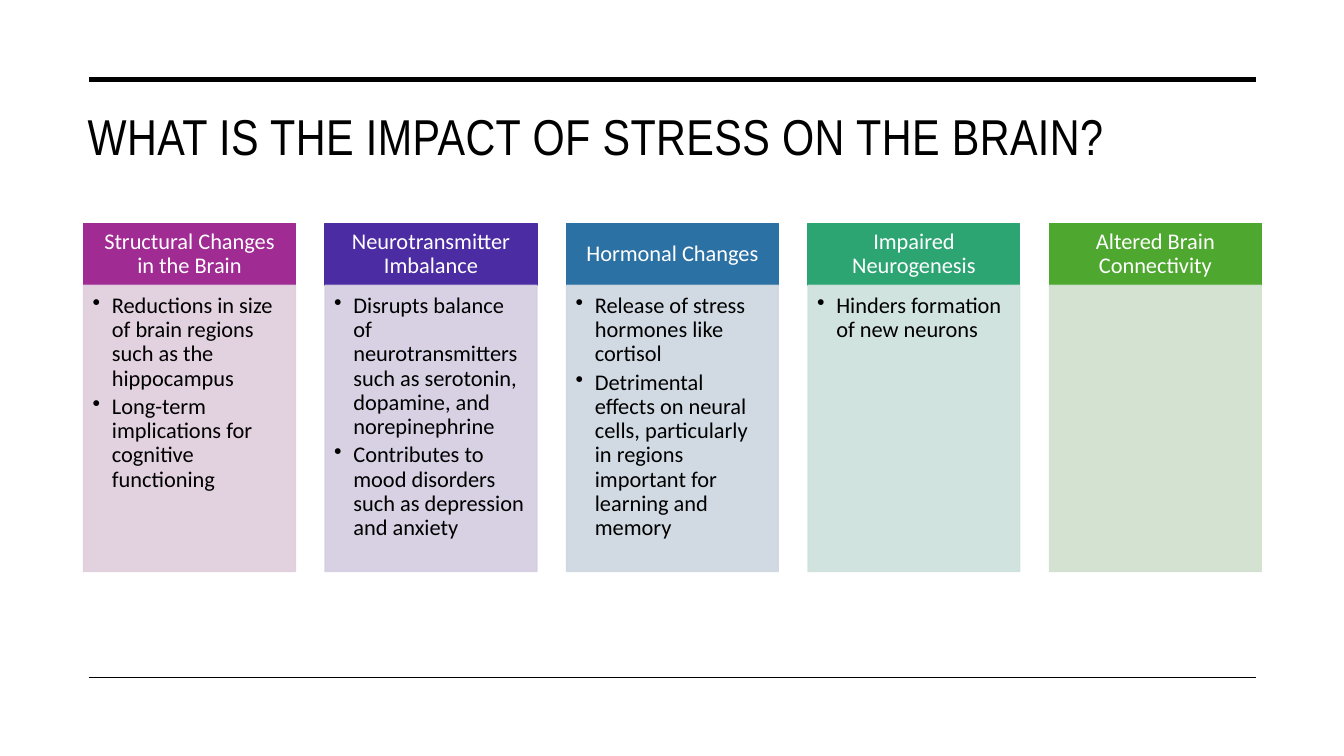
import pptx
import pptx.util
import pptx.dml.color
import pptx.enum.shapes
import pptx.enum.text
from lxml import etree

Inches, Pt = pptx.util.Inches, pptx.util.Pt
RGB = pptx.dml.color.RGBColor
Align, Anchor = pptx.enum.text.PP_ALIGN, pptx.enum.text.MSO_ANCHOR

BLACK = RGB(0x00, 0x00, 0x00)
WHITE = RGB(0xFF, 0xFF, 0xFF)
PLUM, PALE_PLUM = RGB(0xA0, 0x2B, 0x93), RGB(0xDF, 0xCD, 0xDC)
VIOLET, PALE_VIOLET = RGB(0x4B, 0x2C, 0xA2), RGB(0xD4, 0xCD, 0xE0)
BLUE, PALE_BLUE = RGB(0x2C, 0x71, 0xA4), RGB(0xCD, 0xD6, 0xE0)
TEAL, PALE_TEAL = RGB(0x2D, 0xA5, 0x73), RGB(0xCD, 0xE1, 0xDB)
GREEN, PALE_GREEN = RGB(0x4E, 0xA7, 0x2E), RGB(0xD0, 0xE1, 0xCD)

TITLE = "WHAT IS THE IMPACT OF STRESS ON THE BRAIN?"
EFFECTS = [
    ("Structural Changes in the Brain", PLUM, PALE_PLUM, [
        "Reductions in size of brain regions such as the hippocampus",
        "Long-term implications for cognitive functioning"]),
    ("Neurotransmitter Imbalance", VIOLET, PALE_VIOLET, [
        "Disrupts balance of neurotransmitters such as serotonin, "
        "dopamine, and norepinephrine",
        "Contributes to mood disorders such as depression and anxiety"]),
    ("Hormonal Changes", BLUE, PALE_BLUE, [
        "Release of stress hormones like cortisol",
        "Detrimental effects on neural cells, particularly in regions "
        "important for learning and memory"]),
    ("Impaired Neurogenesis", TEAL, PALE_TEAL, [
        "Hinders formation of new neurons"]),
    ("Altered Brain Connectivity", GREEN, PALE_GREEN, []),
]

WIDTH, HEIGHT = 13.33, 7.5
RULES = [(0.79, 3.5), (6.72, 1)]  # height on the slide, weight
RULE_LEFT, RULE_RIGHT = 0.88, 12.46
GRID_LEFT, GRID_RIGHT, GRID_TOP = 0.83, 12.51, 2.22
COL, HEAD, BODY = 2.1, 0.61, 2.84
STEP = (GRID_RIGHT - GRID_LEFT - COL) / (len(EFFECTS) - 1)
INDENT = Inches(0.19)


def write(shape, lines, size=16, font="Calibri", color=BLACK, align=Align.LEFT,
          anchor=Anchor.TOP, pads=(0.1, 0.05, 0.1, 0.05), leading=0.9,
          after=0, bullet=False, track=0):
    frame = shape.text_frame
    frame.word_wrap = True
    frame.auto_size = pptx.enum.text.MSO_AUTO_SIZE.NONE
    frame.vertical_anchor = anchor
    (frame.margin_left, frame.margin_top,
     frame.margin_right, frame.margin_bottom) = map(Inches, pads)
    for n, line in enumerate(lines):
        para = frame.add_paragraph() if n else frame.paragraphs[0]
        para.alignment, para.line_spacing = align, leading
        para.space_before, para.space_after = Pt(0), Pt(after)
        if bullet:
            props = para._p.get_or_add_pPr()
            props.set("marL", str(INDENT))
            props.set("indent", str(-INDENT))
            add(props, "buChar", char="•")
        run = para.add_run()
        run.text = line
        run.font.size, run.font.name = Pt(size), font
        run.font.color.rgb = color
        if track:
            run._r.get_or_add_rPr().set("spc", str(round(track * 100)))


def add(parent, tag, **attrs):
    """Append an element of the DrawingML namespace."""
    return etree.SubElement(parent, pptx.oxml.ns.qn("a:" + tag), **attrs)


def block(slide, left, top, high, color, alpha=100):
    rect = pptx.enum.shapes.MSO_SHAPE.RECTANGLE
    shape = slide.shapes.add_shape(
        rect, *map(Inches, (left, top, COL, high)))
    shape.shadow.inherit = False
    shape.fill.solid()
    shape.fill.fore_color.rgb = color
    shape.line.color.rgb = color
    shape.line.width = Pt(1)
    if alpha < 100:
        for tone in shape._element.spPr.iter(pptx.oxml.ns.qn("a:srgbClr")):
            add(tone, "alpha", val=str(alpha * 1000))
    return shape


def rule(slide, y, weight):
    kind = pptx.enum.shapes.MSO_CONNECTOR.STRAIGHT
    line = slide.shapes.add_connector(
        kind, *map(Inches, (RULE_LEFT, y, RULE_RIGHT, y)))
    line.line.color.rgb = BLACK
    line.line.width = Pt(weight)
    add(line._element.spPr, "effectLst")


def main():
    deck = pptx.Presentation()
    deck.slide_width, deck.slide_height = Inches(WIDTH), Inches(HEIGHT)
    slide = deck.slides.add_slide(deck.slide_layouts.get_by_name("Title Only"))

    for y, weight in RULES:
        rule(slide, y, weight)

    title = slide.shapes.title
    title.left, title.top = Inches(0.77), Inches(0.99)
    title.width, title.height = Inches(11.69), Inches(1.26)
    write(title, [TITLE], size=36, font="Arial Narrow", leading=1, track=0.3)

    for n, (name, dark, pale, points) in enumerate(EFFECTS):
        left = GRID_LEFT + n * STEP
        head = block(slide, left, GRID_TOP, HEAD, dark)
        write(head, [name], color=WHITE, align=Align.CENTER,
              anchor=Anchor.MIDDLE, pads=(0.12, 0.07, 0.12, 0.07))
        body = block(slide, left, GRID_TOP + HEAD, BODY, pale, alpha=90)
        write(body, points, pads=(0.09, 0.09, 0.12, 0.14),
              after=3, bullet=True)

    deck.save("out.pptx")


if __name__ == "__main__":
    main()
